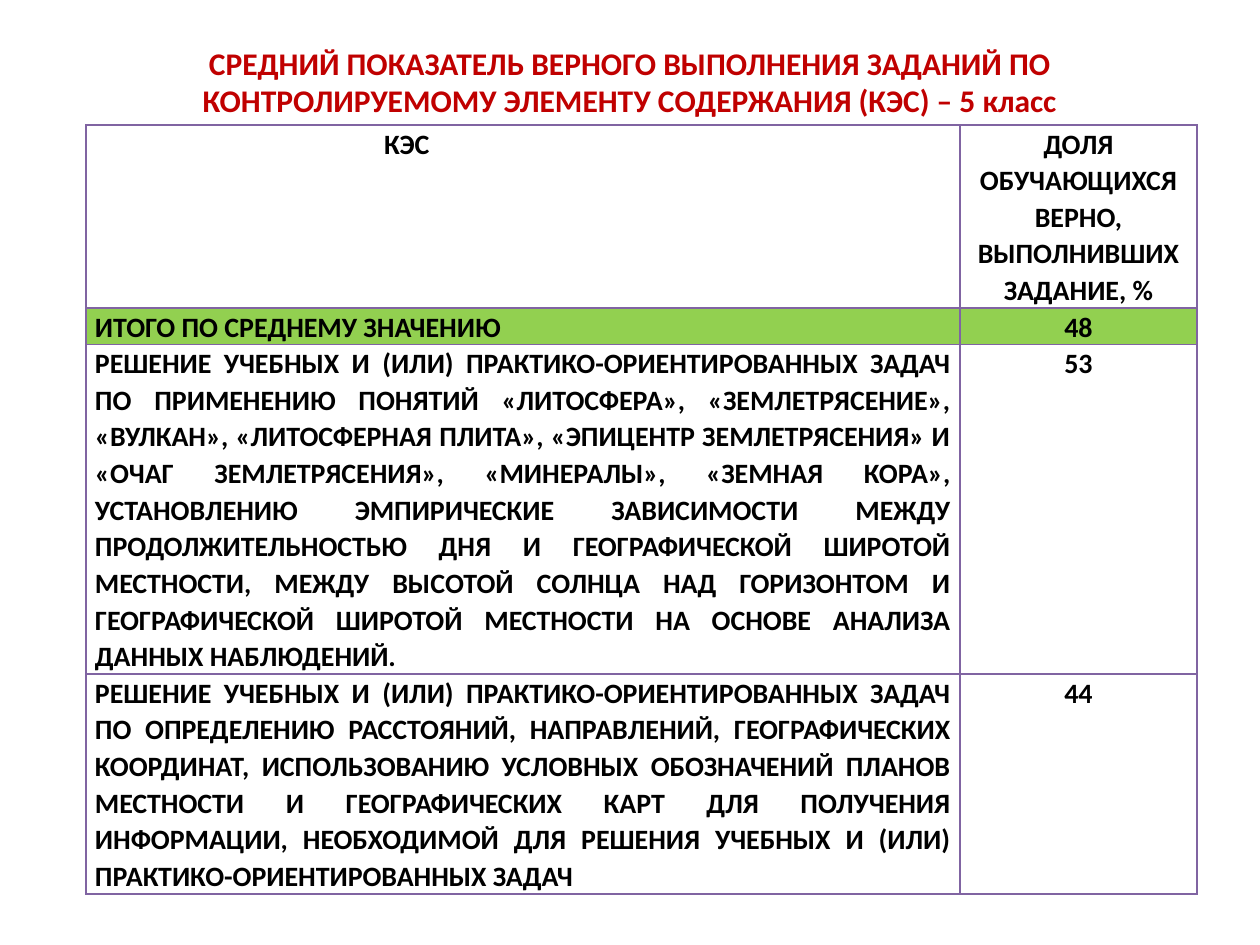
import pptx
import pptx.util
import pptx.dml.color
import pptx.enum.text
import pptx.oxml.ns
import lxml.etree
from dataclasses import dataclass

ALIGN = pptx.enum.text.PP_ALIGN
SCALE = 914400 / 126


@dataclass(frozen=True)
class Theme:
    font: str = "Calibri"
    title: str = "C00000"
    text: str = "000000"
    plain: str = "FFFFFF"
    total: str = "92D050"
    border: str = "8064A2"
    head_size: int = 18
    body_size: int = 16


THEME = Theme()
TITLE = ("СРЕДНИЙ ПОКАЗАТЕЛЬ ВЕРНОГО ВЫПОЛНЕНИЯ ЗАДАНИЙ ПО "
         "КОНТРОЛИРУЕМОМУ ЭЛЕМЕНТУ СОДЕРЖАНИЯ (КЭС) – 5 класс")
ROWS = [
    ("КЭС", "ДОЛЯ ОБУЧАЮЩИХСЯ ВЕРНО, ВЫПОЛНИВШИХ ЗАДАНИЕ, %"),
    ("ИТОГО ПО СРЕДНЕМУ ЗНАЧЕНИЮ", "48"),
    ("РЕШЕНИЕ УЧЕБНЫХ И (ИЛИ) ПРАКТИКО-ОРИЕНТИРОВАННЫХ ЗАДАЧ "
     "ПО ПРИМЕНЕНИЮ ПОНЯТИЙ «ЛИТОСФЕРА», «ЗЕМЛЕТРЯСЕНИЕ», "
     "«ВУЛКАН», «ЛИТОСФЕРНАЯ ПЛИТА», «ЭПИЦЕНТР ЗЕМЛЕТРЯСЕНИЯ» И "
     "«ОЧАГ ЗЕМЛЕТРЯСЕНИЯ», «МИНЕРАЛЫ», «ЗЕМНАЯ КОРА», "
     "УСТАНОВЛЕНИЮ ЭМПИРИЧЕСКИЕ ЗАВИСИМОСТИ МЕЖДУ "
     "ПРОДОЛЖИТЕЛЬНОСТЬЮ ДНЯ И ГЕОГРАФИЧЕСКОЙ ШИРОТОЙ "
     "МЕСТНОСТИ, МЕЖДУ ВЫСОТОЙ СОЛНЦА НАД ГОРИЗОНТОМ И "
     "ГЕОГРАФИЧЕСКОЙ ШИРОТОЙ МЕСТНОСТИ НА ОСНОВЕ АНАЛИЗА "
     "ДАННЫХ НАБЛЮДЕНИЙ.", "53"),
    ("РЕШЕНИЕ УЧЕБНЫХ И (ИЛИ) ПРАКТИКО-ОРИЕНТИРОВАННЫХ ЗАДАЧ "
     "ПО ОПРЕДЕЛЕНИЮ РАССТОЯНИЙ, НАПРАВЛЕНИЙ, ГЕОГРАФИЧЕСКИХ "
     "КООРДИНАТ, ИСПОЛЬЗОВАНИЮ УСЛОВНЫХ ОБОЗНАЧЕНИЙ ПЛАНОВ "
     "МЕСТНОСТИ И ГЕОГРАФИЧЕСКИХ КАРТ ДЛЯ ПОЛУЧЕНИЯ "
     "ИНФОРМАЦИИ, НЕОБХОДИМОЙ ДЛЯ РЕШЕНИЯ УЧЕБНЫХ И (ИЛИ) "
     "ПРАКТИКО-ОРИЕНТИРОВАННЫХ ЗАДАЧ", "44"),
]


def px(length):
    return pptx.util.Emu(round(length * SCALE))


def rgb(color):
    return pptx.dml.color.RGBColor.from_string(color)


def write(frame, text, size, color, align):
    frame.text = text
    par = frame.paragraphs[0]
    par.alignment = align
    for run in par.runs:
        run.font.name = THEME.font
        run.font.size = pptx.util.Pt(size)
        run.font.bold = True
        run.font.color.rgb = rgb(color)
    return par


def edge(cell):
    props = cell._tc.get_or_add_tcPr()
    tag = pptx.oxml.ns.qn
    for side in ("a:lnL", "a:lnR", "a:lnT", "a:lnB"):
        line = lxml.etree.SubElement(props, tag(side), w=str(pptx.util.Pt(1)))
        fill = lxml.etree.SubElement(line, tag("a:solidFill"))
        lxml.etree.SubElement(fill, tag("a:srgbClr"), val=THEME.border)


def fill_cell(cell, text, fill, align):
    edge(cell)
    cell.fill.solid()
    cell.fill.fore_color.rgb = rgb(fill)
    cell.margin_left = cell.margin_right = px(9)
    cell.margin_top = cell.margin_bottom = 0
    par = write(cell.text_frame, text, THEME.body_size, THEME.text, align)
    par.line_spacing = 1.07
    par.space_after = pptx.util.Pt(8)
    return par


def add_title(slide, left, top, width, height):
    box = slide.shapes.add_textbox(px(left), px(top), px(width), px(height))
    frame = box.text_frame
    frame.word_wrap = True
    frame.vertical_anchor = pptx.enum.text.MSO_ANCHOR.MIDDLE
    write(frame, TITLE, THEME.head_size, THEME.title, ALIGN.CENTER)


def add_scores(slide, left, top, width, height):
    share = 237
    lines = (5, 1, 9, 6)
    grid = slide.shapes.add_table(
        len(ROWS), 2, px(left), px(top), px(width), px(height)).table
    grid.first_row = grid.horz_banding = False
    grid.columns[0].width = px(width - share)
    grid.columns[1].width = px(share)
    for i, (topic, score) in enumerate(ROWS):
        grid.rows[i].height = px(height * lines[i] / sum(lines))
        fill = THEME.total if i == 1 else THEME.plain
        align = ALIGN.JUSTIFY if i else ALIGN.LEFT
        par = fill_cell(grid.cell(i, 0), topic, fill, align)
        if i == 0:
            par._p.get_or_add_pPr().set("marL", str(px(289)))
        fill_cell(grid.cell(i, 1), score, fill, ALIGN.CENTER)


def main():
    deck = pptx.Presentation()
    deck.slide_width, deck.slide_height = px(1260), px(945)
    slide = deck.slides.add_slide(deck.slide_layouts[6])
    add_title(slide, 63, 38, 1134, 87)
    add_scores(slide, 86, 125, 1111, 769)
    deck.save("out.pptx")


if __name__ == "__main__":
    main()
